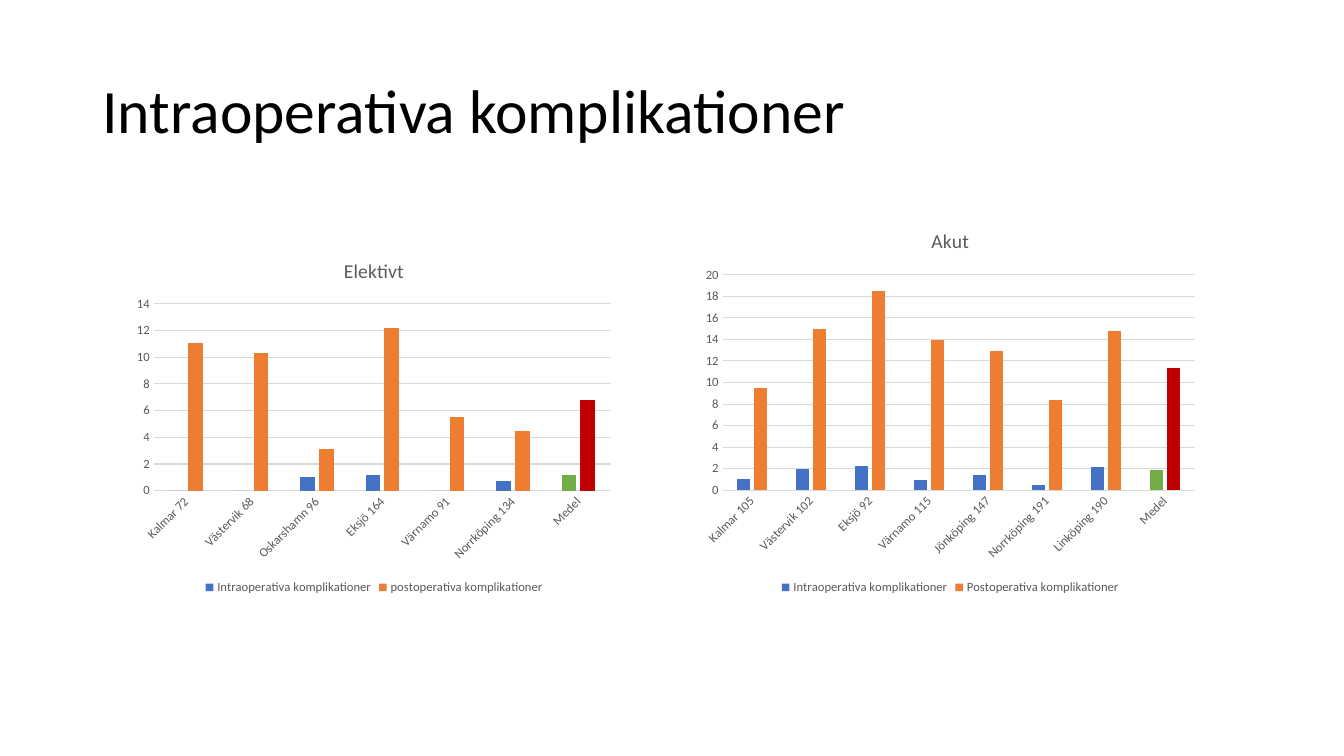
import dataclasses

import pptx
import pptx.chart.data
import pptx.dml.color
import pptx.enum.chart
import pptx.enum.text
import pptx.util
from pptx.util import Cm


@dataclasses.dataclass(frozen=True)
class Theme:
    font: str = "Calibri"
    title_size: int = 44
    chart_title_size: int = 14
    chart_size: int = 10
    label_size: int = 9
    title: str = "000000"
    label: str = "595959"
    grid: str = "D9D9D9"
    bars: tuple = ("4472C4", "ED7D31")
    mean_bars: tuple = ("70AD47", "C00000")
    line_width: float = 0.75


THEME = Theme()


def rgb(colour):
    return pptx.dml.color.RGBColor.from_string(colour)


def style_font(font, size, colour):
    font.name = THEME.font
    font.size = pptx.util.Pt(size)
    font.bold = False
    font.color.rgb = rgb(colour)


def style_line(line):
    line.color.rgb = rgb(THEME.grid)
    line.width = pptx.util.Pt(THEME.line_width)


def fill_solid(part, colour):
    part.format.fill.solid()
    part.format.fill.fore_color.rgb = rgb(colour)


def set_heading(slide, wording):
    heading = slide.shapes.title
    heading.left, heading.top = Cm(2.33), Cm(1.01)
    heading.width, heading.height = Cm(29.21), Cm(3.68)
    frame = heading.text_frame
    frame.text = wording
    frame.word_wrap = True
    frame.auto_size = pptx.enum.text.MSO_AUTO_SIZE.NONE
    frame.vertical_anchor = pptx.enum.text.MSO_ANCHOR.MIDDLE
    paragraph = frame.paragraphs[0]
    paragraph.alignment = pptx.enum.text.PP_ALIGN.LEFT
    paragraph.line_spacing = 0.9
    style_font(paragraph.runs[0].font, THEME.title_size, THEME.title)


def style_axes(chart):
    for axis in (chart.category_axis, chart.value_axis):
        axis.major_tick_mark = pptx.enum.chart.XL_TICK_MARK.NONE
        axis.minor_tick_mark = pptx.enum.chart.XL_TICK_MARK.NONE
        style_font(axis.tick_labels.font, THEME.label_size, THEME.label)
    style_line(chart.category_axis.format.line)
    chart.value_axis.format.line.fill.background()
    chart.value_axis.has_major_gridlines = True
    style_line(chart.value_axis.major_gridlines.format.line)
    # Slant the hospital names by 45 degrees
    label_body = chart.category_axis._element.find(
        "{*}txPr/{*}bodyPr")
    label_body.set("rot", "-2700000")
    label_body.set("vert", "horz")


def add_complication_chart(slide, name, box, hospitals, complications, top, step):
    data = pptx.chart.data.CategoryChartData()
    data.categories = hospitals
    for kind, rates in complications.items():
        data.add_series(kind, rates)
    chart = slide.shapes.add_chart(
        pptx.enum.chart.XL_CHART_TYPE.COLUMN_CLUSTERED, *box, data).chart
    style_font(chart.font, THEME.chart_size, THEME.title)

    # Chart title and legend
    chart.has_title = True
    chart.chart_title.include_in_layout = False
    caption = chart.chart_title.text_frame
    caption.text = name
    style_font(caption.paragraphs[0].runs[0].font,
               THEME.chart_title_size, THEME.label)
    chart.has_legend = True
    chart.legend.position = pptx.enum.chart.XL_LEGEND_POSITION.BOTTOM
    chart.legend.include_in_layout = False
    style_font(chart.legend.font, THEME.label_size, THEME.label)

    # Axes
    style_axes(chart)
    chart.value_axis.minimum_scale = 0
    chart.value_axis.maximum_scale = top
    chart.value_axis.major_unit = step

    # Bars, with the mean set apart by colour
    plot = chart.plots[0]
    plot.vary_by_categories = False
    plot.gap_width = 219
    plot.overlap = -27
    for series, colour, mean_colour in zip(
            plot.series, THEME.bars, THEME.mean_bars):
        series.invert_if_negative = False
        fill_solid(series, colour)
        fill_solid(series.points[len(hospitals) - 1], mean_colour)


def main():
    deck = pptx.Presentation()
    deck.slide_width, deck.slide_height = Cm(33.87), Cm(19.05)
    slide = deck.slides.add_slide(deck.slide_layouts[5])
    set_heading(slide, "Intraoperativa komplikationer")

    # Elective surgery
    add_complication_chart(
        slide, "Elektivt", (Cm(3.2), Cm(6.07), Cm(12.45), Cm(9.02)),
        ["Kalmar 72", "Västervik 68", "Oskarshamn 96", "Eksjö 164",
         "Värnamo 91", "Norrköping 134", "Medel"],
        {"Intraoperativa komplikationer": [0, 0, 1, 1.2, 0, 0.7, 1.2],
         "postoperativa komplikationer": [11.1, 10.3, 3.1, 12.2, 5.5, 4.5, 6.8]},
        top=14, step=2)

    # Emergency surgery
    add_complication_chart(
        slide, "Akut", (Cm(17.53), Cm(5.31), Cm(12.83), Cm(9.78)),
        ["Kalmar 105", "Västervik 102", "Eksjö 92", "Värnamo 115",
         "Jönköping 147", "Norrköping 191", "Linköping 190", "Medel"],
        {"Intraoperativa komplikationer": [1, 2, 2.2, 0.9, 1.4, 0.5, 2.1, 1.9],
         "Postoperativa komplikationer":
             [9.5, 15, 18.5, 13.9, 12.9, 8.4, 14.8, 11.3]},
        top=20, step=2)

    deck.save("out.pptx")


if __name__ == "__main__":
    main()
